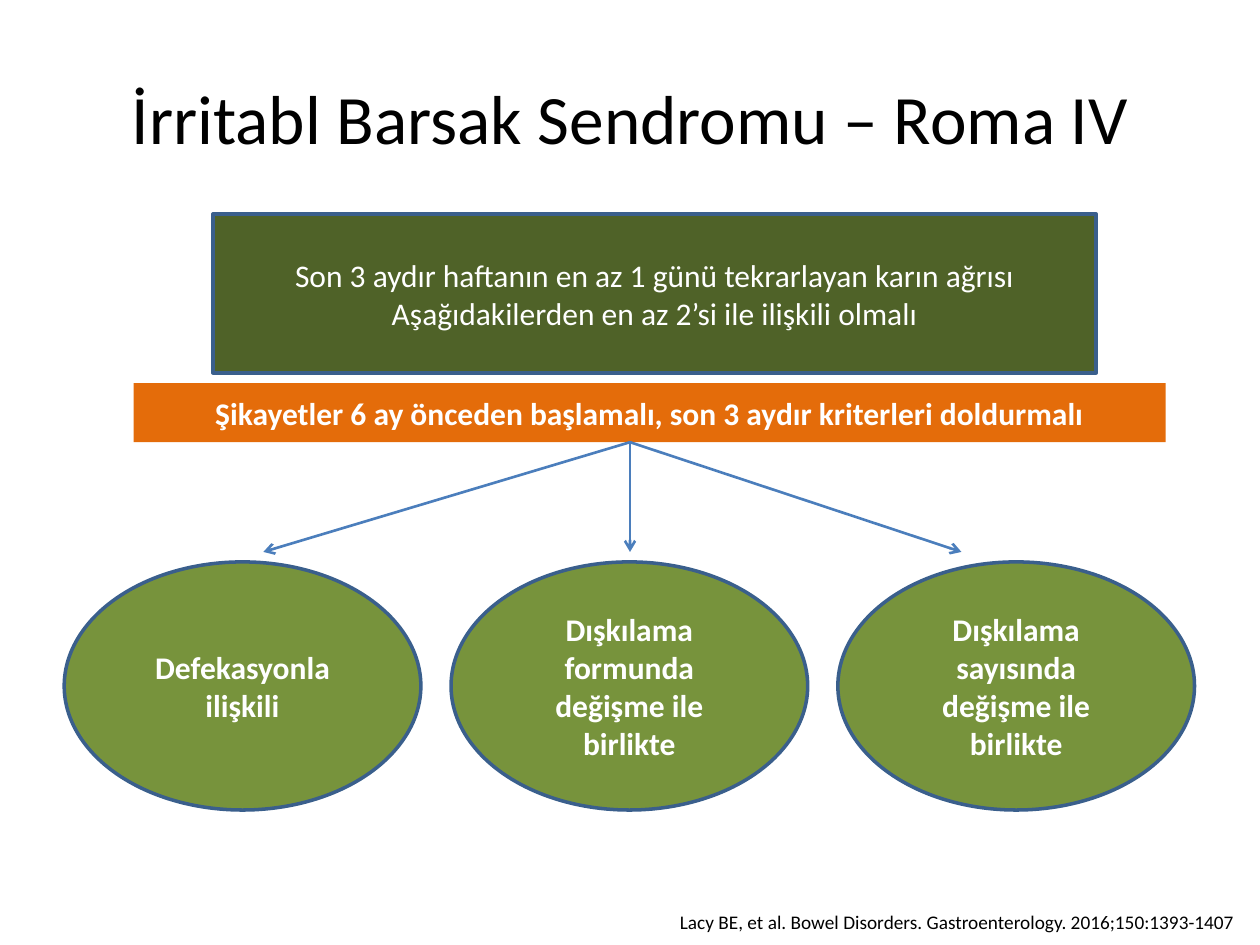
from lxml.etree import SubElement
from pptx import Presentation
from pptx.dml.color import RGBColor
from pptx.enum.shapes import MSO_CONNECTOR, MSO_SHAPE
from pptx.enum.text import MSO_ANCHOR, PP_ALIGN
from pptx.oxml.ns import qn
from pptx.util import Pt

BLACK = RGBColor(0x00, 0x00, 0x00)
WHITE = RGBColor(0xFF, 0xFF, 0xFF)
DARK = RGBColor(0x4F, 0x62, 0x28)
GREEN = RGBColor(0x77, 0x93, 0x3C)
ORANGE = RGBColor(0xE4, 0x6C, 0x0A)
EDGE = RGBColor(0x3A, 0x5F, 0x8C)
BLUE = RGBColor(0x4B, 0x7E, 0xBC)

MAIN = ("Son 3 aydır haftanın en az 1 günü tekrarlayan karın ağrısı",
        "Aşağıdakilerden en az 2’si ile ilişkili olmalı")
ONSET = ("Şikayetler 6 ay önceden başlamalı, son 3 aydır kriterleri doldurmalı",)
SIGNS = (("Defekasyonla", "ilişkili"),
         ("Dışkılama formunda", "değişme ile birlikte"),
         ("Dışkılama sayısında", "değişme ile birlikte"))
SOURCE = "Lacy BE, et al. Bowel Disorders. Gastroenterology. 2016;150:1393-1407"


def put_text(frame, lines, size, color, bold=False, align=PP_ALIGN.CENTER):
    """Fill a text frame with one paragraph per line."""
    frame.text = "\n".join(lines)
    frame.vertical_anchor = MSO_ANCHOR.MIDDLE
    for para in frame.paragraphs:
        para.alignment = align
        for run in para.runs:
            font = run.font
            font.name, font.size, font.bold = "Calibri", Pt(size), bold
            font.color.rgb = color


def add_label(slide, box, lines, size, align, wrap):
    """Place plain black text in the box."""
    frame = slide.shapes.add_textbox(*map(Pt, box)).text_frame
    frame.word_wrap = wrap
    put_text(frame, lines, size, BLACK, align=align)


def add_panel(slide, kind, box, lines, fill, edge=None, bold=True):
    """Place a filled shape with white text in the box."""
    shape = slide.shapes.add_shape(kind, *map(Pt, box))
    shape.shadow.inherit = False
    shape.fill.solid()
    shape.fill.fore_color.rgb = fill
    if edge is None:
        shape.line.fill.background()
    else:
        shape.line.color.rgb = edge
        shape.line.width = Pt(2)
    shape.text_frame.word_wrap = True
    put_text(shape.text_frame, lines, 18, WHITE, bold)


def add_signs(slide, box):
    """Spread the three ovals evenly across the box."""
    left, top, width, height = box
    oval = 203.8
    step = (width - oval) / (len(SIGNS) - 1)
    for i, lines in enumerate(SIGNS):
        spot = (left + i * step, top, oval, height)
        add_panel(slide, MSO_SHAPE.OVAL, spot, lines, GREEN, EDGE)


def add_fan(slide, box, start):
    """Draw arrows from a top point to the left, start and right of the base."""
    left, top, width, height = box
    for end in (start, left + width, left):
        ends = map(Pt, (start, top, end, top + height))
        arrow = slide.shapes.add_connector(MSO_CONNECTOR.STRAIGHT, *ends)
        arrow.line.color.rgb = BLUE
        arrow.line.width = Pt(1.5)
        SubElement(arrow.line._get_or_add_ln(), qn("a:tailEnd"), type="arrow")
        SubElement(arrow._element.spPr, qn("a:effectLst"))


def main():
    """Build and save the slide."""
    deck = Presentation()
    deck.slide_width, deck.slide_height = Pt(720), Pt(540)
    slide = deck.slides.add_slide(deck.slide_layouts[6])
    add_label(slide, (36, 21.6, 648, 90), ["İrritabl Barsak Sendromu – Roma IV"],
              39.6, PP_ALIGN.CENTER, True)
    add_panel(slide, MSO_SHAPE.RECTANGLE, (121.7, 122.4, 504.7, 90.7),
              MAIN, DARK, EDGE, bold=False)
    add_signs(slide, (36.7, 321.1, 645.9, 141.8))
    add_panel(slide, MSO_SHAPE.RECTANGLE, (76.4, 218.9, 589.7, 33.8), ONSET, ORANGE)
    add_label(slide, (381.4, 516.2, 336.4, 20.9), [SOURCE], 11, PP_ALIGN.LEFT, False)
    add_fan(slide, (150.5, 252.7, 398.9, 62.7), 360)
    deck.save("out.pptx")


if __name__ == "__main__":
    main()
